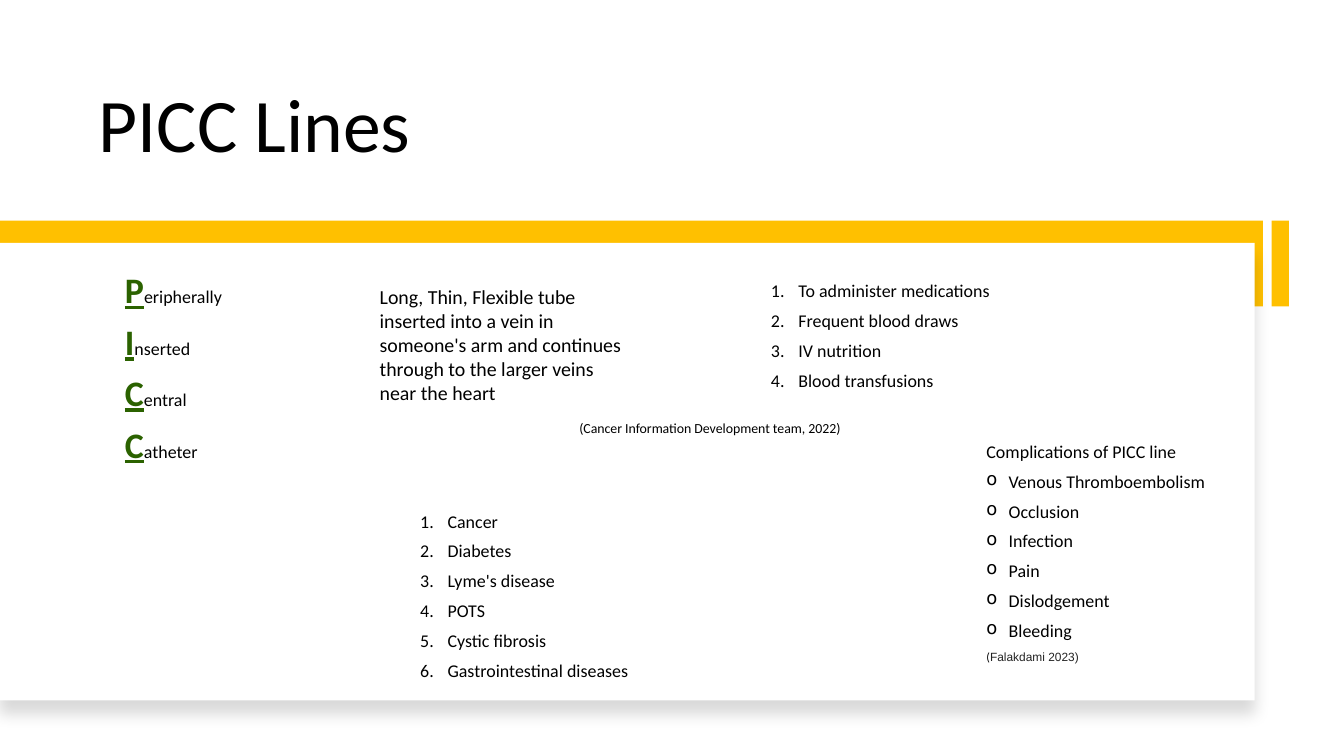
from dataclasses import dataclass

from lxml.etree import SubElement
from pptx import Presentation
from pptx.dml.color import RGBColor
from pptx.enum.shapes import MSO_SHAPE
from pptx.enum.text import MSO_ANCHOR
from pptx.oxml.ns import qn
from pptx.util import Cm, Pt


@dataclass(frozen=True)
class Theme:
    font: str = "Calibri"
    source_font: str = "Arial"
    ink: RGBColor = RGBColor(0x00, 0x00, 0x00)
    source_ink: RGBColor = RGBColor(0x22, 0x22, 0x22)
    gold: RGBColor = RGBColor(0xFF, 0xC0, 0x00)
    green: RGBColor = RGBColor(0x2B, 0x62, 0x00)
    white: RGBColor = RGBColor(0xFF, 0xFF, 0xFF)
    title: float = 54
    initial: float = 25.6
    definition: float = 14.2
    body: float = 12.8
    citation: float = 9.9
    source: float = 8.5


theme = Theme()


def add_text(place, lines, size, space_after=6):
    """Add a wrapped text box with one paragraph per line."""
    box = page.shapes.add_textbox(*map(Cm, place))
    frame = box.text_frame
    frame.word_wrap = True
    frame.text = "\n".join(lines)
    for para in frame.paragraphs:
        para.space_after = Pt(space_after)
        for span in para.runs:
            span.font.name = theme.font
            span.font.size = Pt(size)
            span.font.color.rgb = theme.ink
    return frame


def add_bullets(paragraphs, indent, tag, **marker):
    """Give paragraphs a hanging indent and a bullet or number."""
    for para in paragraphs:
        properties = para._p.get_or_add_pPr()
        properties.set("marL", str(Cm(indent)))
        properties.set("indent", str(-Cm(indent)))
        SubElement(properties, qn(tag), **marker)


deck = Presentation()
deck.slide_width, deck.slide_height = Cm(33.87), Cm(19.05)
page = deck.slides.add_slide(deck.slide_layouts[6])

# Gold bars with the white panel on top
for place, color in [
    ((32.05, 5.56, 0.43, 2.16), theme.gold),
    ((0, 5.56, 31.83, 2.16), theme.gold),
    ((0, 6.12, 31.62, 11.53), theme.white),
]:
    panel = page.shapes.add_shape(MSO_SHAPE.RECTANGLE, *map(Cm, place))
    panel.shadow.inherit = False
    panel.fill.solid()
    panel.fill.fore_color.rgb = color
    panel.line.fill.background()

# Soft shadow below the panel
effects = panel._element.spPr.find(qn("a:effectLst"))
shadow = SubElement(effects, qn("a:outerShdw"), blurRad=str(Pt(11)),
                    dist=str(Pt(10)), dir="5400000", algn="t", rotWithShape="0")
shade = SubElement(shadow, qn("a:srgbClr"), val=str(theme.ink))
SubElement(shade, qn("a:alpha"), val="15000")

# Title
title = add_text((2.24, 1.07, 25.65, 3.3), ["PICC Lines"], theme.title, 0)
title.vertical_anchor = MSO_ANCHOR.BOTTOM
title.paragraphs[0].line_spacing = 0.9

# Acronym with emphasised initials
words = ["Peripherally", "Inserted", "Central", "Catheter"]
acronym = add_text((2.9, 6.63, 4.29, 5.31), [word[0] for word in words], theme.initial)
for para, word in zip(acronym.paragraphs, words):
    initial = para.runs[0].font
    initial.bold = initial.underline = True
    initial.color.rgb = theme.green
    rest = para.add_run()
    rest.text = word[1:]
    rest.font.name = theme.font
    rest.font.size = Pt(theme.body)
    rest.font.color.rgb = theme.ink

# Definition
add_text((9.32, 7.06, 6.58, 3.3),
         ["Long, Thin, Flexible tube inserted into a vein in someone's arm "
          "and continues through to the larger veins near the heart"],
         theme.definition)

# Numbered lists: uses and conditions
for place, items in [
    ((19.18, 6.93, 7.44, 3.07),
     ["To administer medications", "Frequent blood draws", "IV nutrition",
      "Blood transfusions"]),
    ((10.34, 12.73, 6.58, 4.6),
     ["Cancer", "Diabetes", "Lyme's disease", "POTS", "Cystic fibrosis",
      "Gastrointestinal diseases"]),
]:
    numbered = add_text(place, items, theme.body)
    add_bullets(numbered.paragraphs, 0.69, "a:buAutoNum", type="arabicPeriod")

# Complications, with their source in the last line
complications = add_text(
    (24.61, 10.97, 6.58, 5.94),
    ["Complications of PICC line", "Venous Thromboembolism", "Occlusion",
     "Infection", "Pain", "Dislodgement", "Bleeding", "("],
    theme.body)
add_bullets(complications.paragraphs[1:-1], 0.56, "a:buChar", char="o")
source = complications.paragraphs[-1]
source.add_run().text = "Falakdami 2023)"
for span in source.runs:
    span.font.size = Pt(theme.source)
span.font.name = theme.source_font
span.font.color.rgb = theme.source_ink

# Citation
add_text((14.35, 10.46, 9.68, 0.69),
         ["(Cancer Information Development team, 2022)"], theme.citation)

deck.save("out.pptx")
